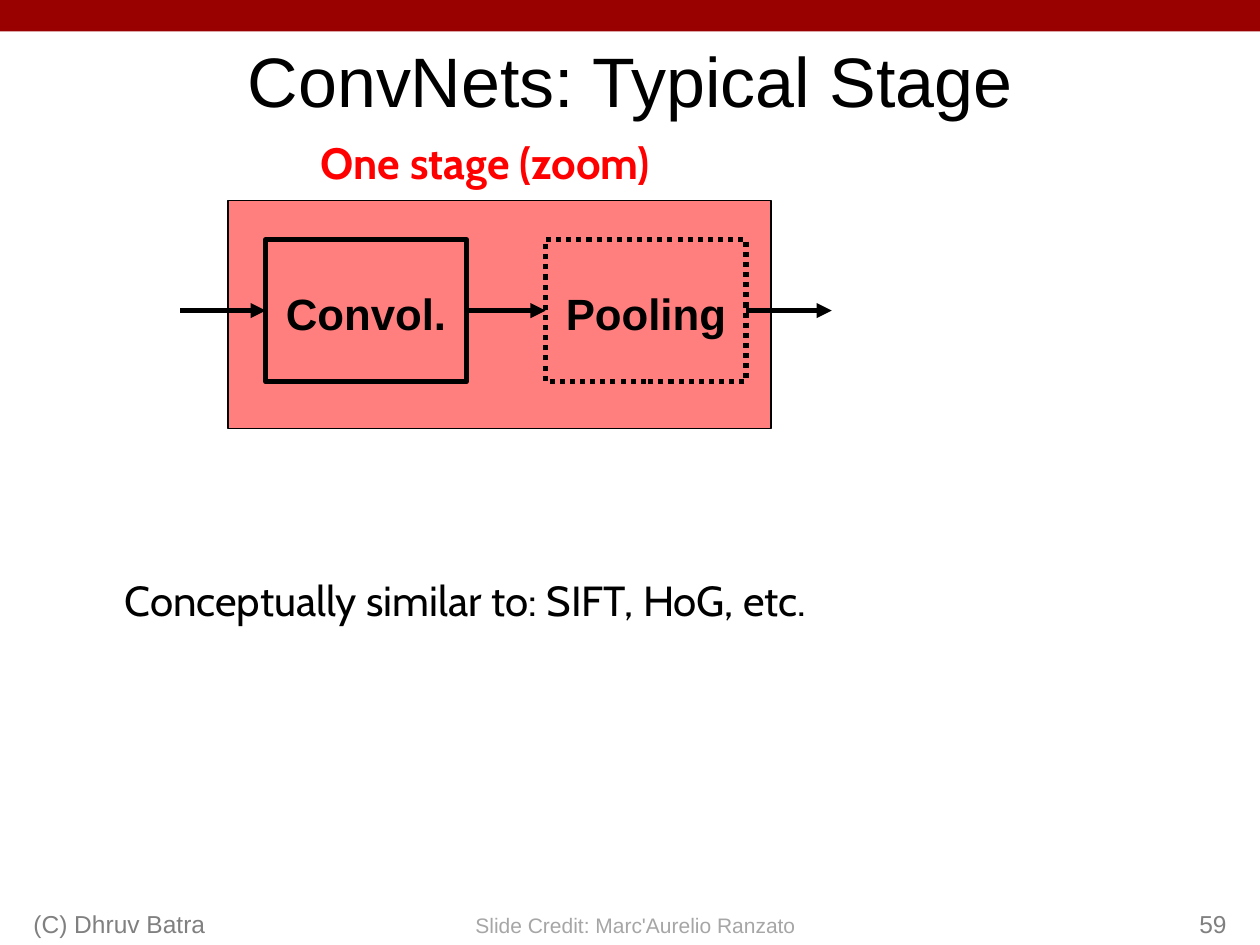
from dataclasses import dataclass

from lxml import etree
from pptx import Presentation
from pptx.dml.color import RGBColor
from pptx.enum.dml import MSO_LINE
from pptx.enum.shapes import MSO_CONNECTOR, MSO_SHAPE
from pptx.enum.text import MSO_ANCHOR, PP_ALIGN
from pptx.oxml.ns import qn
from pptx.util import Pt

RECTANGLE = MSO_SHAPE.RECTANGLE
STRAIGHT = MSO_CONNECTOR.STRAIGHT
DOTTED = MSO_LINE.ROUND_DOT
LEFT, CENTER, RIGHT = PP_ALIGN.LEFT, PP_ALIGN.CENTER, PP_ALIGN.RIGHT
TOP, MIDDLE, BOTTOM = MSO_ANCHOR.TOP, MSO_ANCHOR.MIDDLE, MSO_ANCHOR.BOTTOM
LEFT_SIDE, RIGHT_SIDE = 1, 3


@dataclass(frozen=True)
class Theme:
    """Colours, fonts, type sizes and line widths of the slide."""
    banner: RGBColor = RGBColor(0x99, 0x00, 0x00)
    accent: RGBColor = RGBColor(0xFF, 0x00, 0x00)
    ink: RGBColor = RGBColor(0x00, 0x00, 0x00)
    footer: RGBColor = RGBColor(0x80, 0x80, 0x80)
    credit: RGBColor = RGBColor(0xA6, 0xA6, 0xA6)
    sans: str = "Arial"
    humanist: str = "Cabin"
    title_size: float = 40
    label_size: float = 25
    remark_size: float = 24
    footer_size: float = 14
    credit_size: float = 12
    thin: float = 0.75
    thick: float = 2.89


THEME = Theme()


def write(shape, text, size, color, font=THEME.sans, bold=False, align=CENTER,
          anchor=TOP, insets=(7.2, 3.6, 7.2, 3.6), wrap=True):
    """Put one formatted paragraph into a shape."""
    frame = shape.text_frame
    frame.word_wrap = wrap
    frame.vertical_anchor = anchor
    (frame.margin_left, frame.margin_top,
     frame.margin_right, frame.margin_bottom) = map(Pt, insets)
    frame.text = text
    paragraph = frame.paragraphs[0]
    paragraph.alignment = align
    run_font = paragraph.runs[0].font
    run_font.name, run_font.size, run_font.bold = font, Pt(size), bold
    run_font.color.rgb = color


def add_text(slide, box, text, size, color, **style):
    """Add a text box filling the given box."""
    write(slide.shapes.add_textbox(*map(Pt, box)), text, size, color, **style)


def add_rectangle(slide, box, fill=None, line_width=None):
    """Add a flat rectangle with an optional fill and outline."""
    rectangle = slide.shapes.add_shape(RECTANGLE, *map(Pt, box))
    rectangle.shadow.inherit = False
    if fill is None:
        rectangle.fill.background()
    else:
        rectangle.fill.solid()
        rectangle.fill.fore_color.rgb = fill
    if line_width is None:
        rectangle.line.fill.background()
    else:
        rectangle.line.color.rgb = THEME.ink
        rectangle.line.width = Pt(line_width)
    return rectangle


def add_arrow(slide, start_x, end_x, y, source=None, target=None):
    """Add a horizontal arrow, joined to the blocks it touches."""
    arrow = slide.shapes.add_connector(
        STRAIGHT, Pt(start_x), Pt(y), Pt(end_x), Pt(y))
    if source is not None:
        arrow.begin_connect(source, RIGHT_SIDE)
    if target is not None:
        arrow.end_connect(target, LEFT_SIDE)
    arrow.line.color.rgb = THEME.ink
    arrow.line.width = Pt(THEME.thick)
    etree.SubElement(arrow.line._get_or_add_ln(), qn("a:tailEnd"), type="triangle")
    etree.SubElement(arrow._element.spPr, qn("a:effectLst"))


def add_block(slide, box, label):
    """Add one labelled processing block."""
    block = add_rectangle(slide, box, line_width=THEME.thick)
    write(block, label, THEME.label_size, THEME.ink, bold=True, anchor=MIDDLE,
          insets=(7.9, 6.5, 7.9, 4.3), wrap=False)
    return block


def add_header(slide, box):
    """Add the banner and the title below it."""
    left, top, width, height = box
    banner_height = height / 4
    add_rectangle(slide, (left, top, width, banner_height), fill=THEME.banner)
    add_text(slide, (left, top + banner_height, width, height - banner_height),
             "ConvNets: Typical Stage", THEME.title_size, THEME.ink)


def add_stage(slide, box):
    """Add the stage panel with its caption, two blocks and three arrows."""
    left, top, width, height = box
    block_width, block_height, pitch, reach = 114.5, 81.4, 159.9, 49
    panel = add_rectangle(slide, box, THEME.accent, THEME.thin)
    panel_color = panel.fill._xPr.find(qn("a:solidFill"))[0]
    etree.SubElement(panel_color, qn("a:alpha"), val="50000")

    first_left, block_top = left + 21.6, top + 22.3
    convolution, pooling = [
        add_block(slide, (first_left + column * pitch, block_top,
                          block_width, block_height), label)
        for column, label in enumerate(("Convol.", "Pooling"))]
    pooling.line.dash_style = DOTTED

    flow_y = block_top + block_height / 2
    pooling_left = first_left + pitch
    pooling_right = pooling_left + block_width
    add_arrow(slide, first_left - reach, first_left, flow_y, target=convolution)
    add_arrow(slide, first_left + block_width, pooling_left, flow_y,
              convolution, pooling)
    add_arrow(slide, pooling_right, pooling_right + reach, flow_y, source=pooling)

    add_text(slide, (left, top - 41.8, width - 16.5, 34.6), "One stage (zoom)",
             THEME.label_size, THEME.accent, font=THEME.humanist, bold=True,
             insets=(6.5, 5, 6.5, 2.9))


def add_remark(slide, box):
    """Add the comparison with earlier features."""
    add_text(slide, box, "Conceptually similar to: SIFT, HoG, etc.",
             THEME.remark_size, THEME.ink, font=THEME.humanist,
             insets=(7.2, 5, 7.2, 3.6))


def add_footer(slide, box):
    """Add the copyright line, the slide credit and the slide number."""
    left, top, width, height = box
    add_text(slide, (left + 263.5, top + 13.7, 199.4, 21.6),
             "Slide Credit: Marc'Aurelio Ranzato", THEME.credit_size,
             THEME.credit, wrap=False)
    add_text(slide, (left + 12, top, 228, height), "(C) Dhruv Batra",
             THEME.footer_size, THEME.footer, align=LEFT, anchor=BOTTOM)
    add_text(slide, (left + width - 162, top, 150, height), "59",
             THEME.footer_size, THEME.footer, align=RIGHT, anchor=BOTTOM)


def main():
    """Build the slide and save it."""
    presentation = Presentation()
    presentation.slide_width, presentation.slide_height = Pt(720), Pt(540)
    slide = presentation.slides.add_slide(presentation.slide_layouts[6])
    add_header(slide, (0, 0, 720, 72))
    add_stage(slide, (130.3, 114.5, 310.3, 130.3))
    add_remark(slide, (10.1, 323.3, 511.9, 33.8))
    add_footer(slide, (0, 504, 720, 36))
    presentation.save("out.pptx")


if __name__ == "__main__":
    main()
